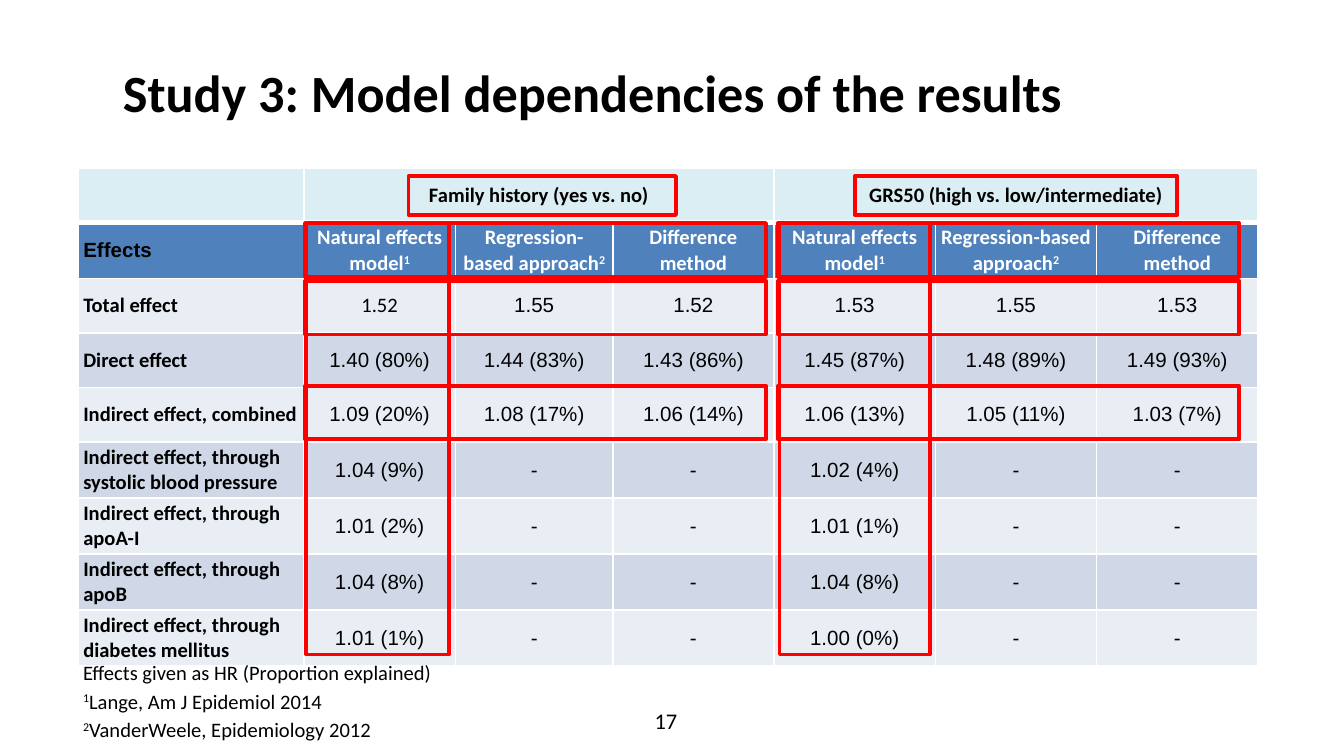
from lxml import etree
from pptx import Presentation
from pptx.dml.color import RGBColor
from pptx.enum import shapes, text
from pptx.oxml import ns
from pptx.util import Inches, Pt

COLORS = {
    "black": "000000",
    "white": "FFFFFF",
    "group": "DBEEF4",
    "header": "4F81BD",
    "light": "E9EDF4",
    "dark": "D0D8E8",
    "highlight": "FF0000",
}
COLUMN_WIDTHS = [1.68, 1.13, 1.17, 1.2, 1.2, 1.2, 1.2]
GROUPS = {1: "Family history (yes vs. no)", 4: "GRS50 (high vs. low/intermediate)"}
METHODS = [("Natural effects model", "1"), ("Regression-based approach", "2"), ("Difference method", "")]
EFFECTS = [
    ("Total effect", "1.52", "1.55", "1.52", "1.53", "1.55", "1.53"),
    ("Direct effect", "1.40 (80%)", "1.44 (83%)", "1.43 (86%)", "1.45 (87%)", "1.48 (89%)", "1.49 (93%)"),
    ("Indirect effect, combined", "1.09 (20%)", "1.08 (17%)", "1.06 (14%)", "1.06 (13%)", "1.05 (11%)", "1.03 (7%)"),
    ("Indirect effect, through systolic blood pressure", "1.04 (9%)", "-", "-", "1.02 (4%)", "-", "-"),
    ("Indirect effect, through apoA-I", "1.01 (2%)", "-", "-", "1.01 (1%)", "-", "-"),
    ("Indirect effect, through apoB", "1.04 (8%)", "-", "-", "1.04 (8%)", "-", "-"),
    ("Indirect effect, through diabetes mellitus", "1.01 (1%)", "-", "-", "1.00 (0%)", "-", "-"),
]


def rgb(name):
    return RGBColor.from_string(COLORS[name])


def add_run(paragraph, content, size=11, color="black", bold=False, font="Calibri", superscript=False):
    run = paragraph.add_run()
    run.text = content
    run.font.size = Pt(size)
    run.font.name = font
    run.font.bold = bold
    run.font.color.rgb = rgb(color)
    if superscript:
        run.font._element.set("baseline", "30000")


def add_text_box(slide, box):
    frame = slide.shapes.add_textbox(*map(Inches, box)).text_frame
    frame.word_wrap = True
    return frame


def add_title(slide, box):
    title = slide.shapes.title
    title.left, title.top, title.width, title.height = map(Inches, box)
    title.text_frame.vertical_anchor = text.MSO_ANCHOR.MIDDLE
    paragraph = title.text_frame.paragraphs[0]
    paragraph.alignment = text.PP_ALIGN.CENTER
    add_run(paragraph, "Study 3: Model dependencies of the results", 28, bold=True)


def style_cell(cell, fill, bottom=1):
    """Set margins, white borders and fill; bottom is a border width in points."""
    cell.margin_left = cell.margin_right = Inches(0.04)
    cell.margin_top = cell.margin_bottom = Inches(0.02)
    cell.vertical_anchor = text.MSO_ANCHOR.MIDDLE
    properties = cell._tc.get_or_add_tcPr()
    for side, width in (("L", 1), ("R", 1), ("T", 1), ("B", bottom)):
        line = etree.SubElement(properties, ns.qn(f"a:ln{side}"), w=str(Pt(width)))
        solid = etree.SubElement(line, ns.qn("a:solidFill"))
        etree.SubElement(solid, ns.qn("a:srgbClr"), val=COLORS["white"])
    cell.fill.solid()
    cell.fill.fore_color.rgb = rgb(fill)


def centred_paragraph(cell):
    paragraph = cell.text_frame.paragraphs[0]
    paragraph.alignment = text.PP_ALIGN.CENTER
    return paragraph


def add_effects_table(slide, box):
    row_count = len(EFFECTS) + 2
    table = slide.shapes.add_table(row_count, len(COLUMN_WIDTHS), *map(Inches, box)).table
    for column, width in zip(table.columns, COLUMN_WIDTHS):
        column.width = Inches(width)
    for index, row in enumerate(table.rows):
        row.height = Inches(box[3] / row_count)
        fill = ("group", "header")[index] if index < 2 else ("light", "dark")[index % 2]
        for cell in row.cells:
            style_cell(cell, fill, 3 if index == 0 else 1)

    add_run(table.cell(1, 0).text_frame.paragraphs[0], "Effects", bold=True, font="Arial")
    for start, label in GROUPS.items():
        table.cell(0, start).merge(table.cell(0, start + 2))
        add_run(centred_paragraph(table.cell(0, start)), label, bold=True)
        for column, (method, mark) in enumerate(METHODS, start):
            paragraph = centred_paragraph(table.cell(1, column))
            add_run(paragraph, method, color="white", bold=True)
            if mark:
                add_run(paragraph, mark, color="white", bold=True, superscript=True)

    for row, (effect, *values) in enumerate(EFFECTS, 2):
        add_run(table.cell(row, 0).text_frame.paragraphs[0], effect, bold=True)
        for column, value in enumerate(values, 1):
            font = "Calibri" if (row, column) == (2, 1) else "Arial"
            add_run(centred_paragraph(table.cell(row, column)), value, font=font)


def add_highlight(slide, box):
    frame = slide.shapes.add_shape(shapes.MSO_SHAPE.RECTANGLE, *map(Inches, box))
    frame.shadow.inherit = False
    frame.fill.background()
    frame.line.color.rgb = rgb("highlight")
    frame.line.width = Pt(2)


def add_group_highlights(slide, box, column_width, label_left, label_width):
    """Frame a group's label, its first column and its key rows."""
    left, top, width, height = box
    add_highlight(slide, (left + 0.01, top + 0.35, column_width, height - 0.35))
    add_highlight(slide, (left + label_left, top, label_width, 0.29))
    for offset in (0.35, 0.78, 1.56):
        add_highlight(slide, (left, top + offset, width, 0.4))


def add_footnotes(slide, box):
    frame = add_text_box(slide, box)
    notes = [("", "Effects given as HR (Proportion explained)"),
             ("1", "Lange, Am J Epidemiol 2014"),
             ("2", "VanderWeele, Epidemiology 2012")]
    for index, (mark, note) in enumerate(notes):
        paragraph = frame.add_paragraph() if index else frame.paragraphs[0]
        if index:
            paragraph.space_before = Pt(2.2)
        if mark:
            add_run(paragraph, mark, superscript=True)
        add_run(paragraph, note)


def add_page_number(slide, box):
    frame = add_text_box(slide, box)
    frame.vertical_anchor = text.MSO_ANCHOR.MIDDLE
    paragraph = frame.paragraphs[0]
    paragraph.alignment = text.PP_ALIGN.CENTER
    add_run(paragraph, "17", 12)


def main():
    presentation = Presentation()
    presentation.slide_width = Inches(10)
    presentation.slide_height = presentation.slide_width * 9 // 16
    slide = presentation.slides.add_slide(presentation.slide_layouts[5])
    add_effects_table(slide, (0.58, 1.25, 8.77, 3.65))
    add_title(slide, (0.75, 0.08, 7.31, 1.21))
    add_page_number(slide, (3.79, 5.21, 2.33, 0.3))
    add_footnotes(slide, (0.52, 4.86, 8.6, 0.73))
    add_group_highlights(slide, (2.27, 1.31, 3.43, 3.56), 1.06, 0.77, 1.99)
    add_group_highlights(slide, (5.79, 1.31, 3.43, 3.56), 1.12, 0.57, 2.4)
    presentation.save("out.pptx")


if __name__ == "__main__":
    main()
